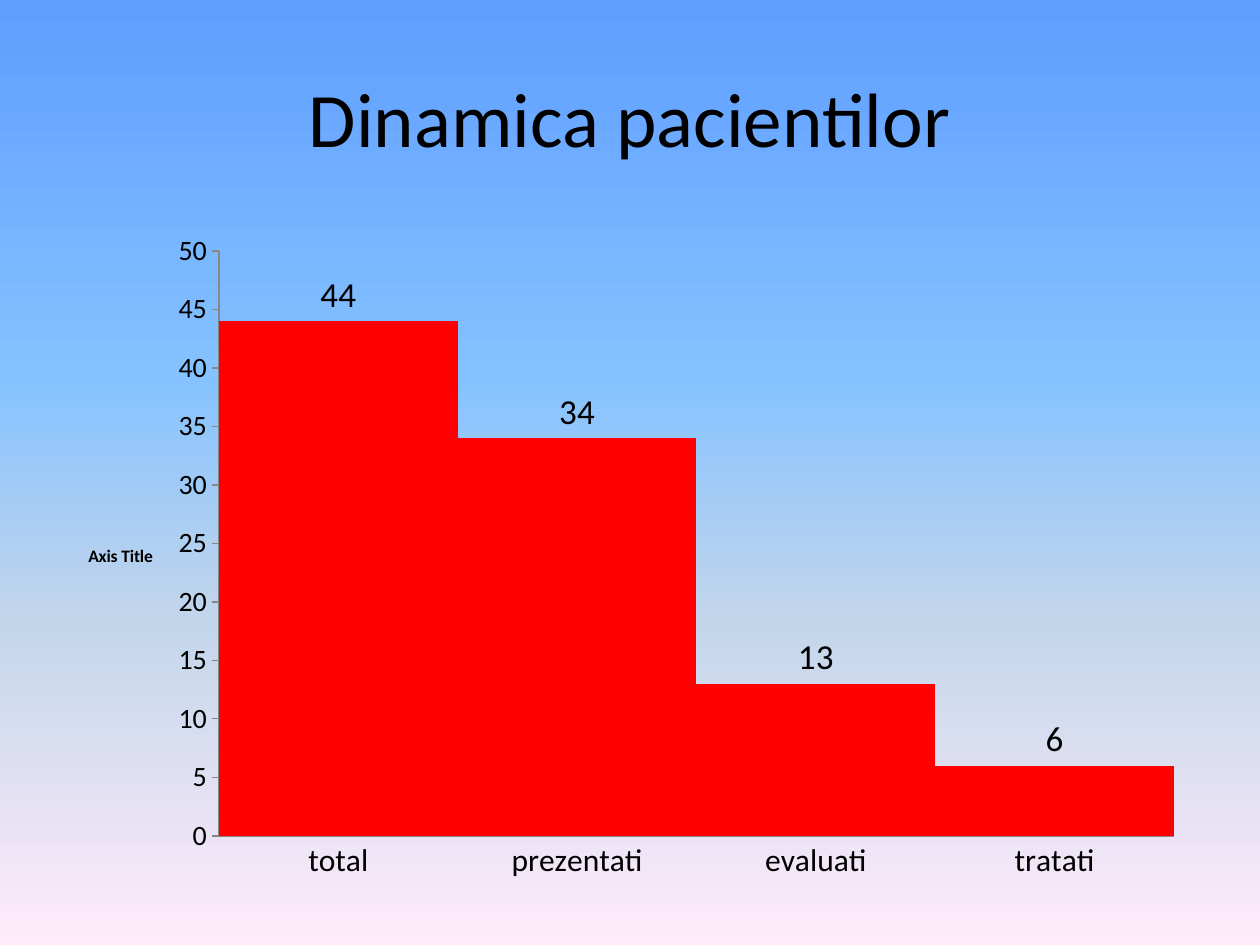
from lxml.etree import SubElement
from pptx import Presentation
from pptx.chart.data import CategoryChartData
from pptx.dml.color import RGBColor
from pptx.enum.chart import XL_CHART_TYPE, XL_LABEL_POSITION, XL_TICK_MARK
from pptx.enum.text import MSO_ANCHOR, PP_ALIGN
from pptx.oxml import parse_xml
from pptx.oxml.ns import nsdecls, qn
from pptx.util import Emu, Pt

PX = 914400 // 126
FONT = "Calibri"
COLORS = {"text": "000000", "bar": "FF0000", "axis": "878787"}
SKY = [(0, "5E9EFF"), (40, "85C2FF"), (66, "C4D6EB"), (100, "FFEBFA")]
CHART_BOX = (63, 221, 1134, 671)
PLOT_BOX = (219, 251, 955, 585)


def px(*lengths):
    return [Emu(n * PX) for n in lengths]


def color(name):
    return RGBColor.from_string(COLORS[name])


def set_font(font, size, bold=False):
    font.name = FONT
    font.size = Pt(size)
    font.bold = bold
    font.color.rgb = color("text")


def add_background(s, stops):
    fill = s.background.fill
    fill.gradient()
    fill.gradient_angle = 270
    # More than two gradient stops need XML
    gs_list = fill.gradient_stops[0]._gs.getparent()
    for gs in list(gs_list):
        gs_list.remove(gs)
    for pos, rgb in stops:
        gs_list.append(parse_xml(
            f'<a:gs {nsdecls("a")} pos="{pos * 1000}"><a:srgbClr val="{rgb}"/></a:gs>'))


def add_title(s, text, box):
    tf = s.shapes.add_textbox(*px(*box)).text_frame
    tf.word_wrap = True
    tf.vertical_anchor = MSO_ANCHOR.MIDDLE
    p = tf.paragraphs[0]
    p.text = text
    p.alignment = PP_ALIGN.CENTER
    set_font(p.font, 44)


def style_axis(axis, size, tick):
    axis.has_major_gridlines = False
    axis.major_tick_mark = tick
    axis.minor_tick_mark = XL_TICK_MARK.NONE
    axis.format.line.color.rgb = color("axis")
    axis.format.line.width = Pt(0.75)
    set_font(axis.tick_labels.font, size)


def add_axis_title(axis, text):
    tf = axis.axis_title.text_frame
    tf.text = text
    set_font(tf.paragraphs[0].font, 10, bold=True)
    body = tf._txBody.find(qn("a:bodyPr"))
    body.set("rot", "0")
    body.set("vert", "horz")


def place_plot(chart, plot, box):
    area = chart.plots[0]._element.getparent()
    layout = area.find(qn("c:layout"))
    if layout is None:
        layout = parse_xml(f'<c:layout {nsdecls("c")}/>')
        area.insert(0, layout)
    manual = SubElement(layout, qn("c:manualLayout"))
    x, y, w, h = box
    values = [("layoutTarget", "inner"), ("xMode", "edge"), ("yMode", "edge"),
              ("x", (plot[0] - x) / w), ("y", (plot[1] - y) / h),
              ("w", plot[2] / w), ("h", plot[3] / h)]
    for tag, value in values:
        SubElement(manual, qn(f"c:{tag}")).set("val", str(value))


def add_column_chart(s, cats, name, vals, box):
    data = CategoryChartData()
    data.categories = cats
    data.add_series(name, vals)
    chart = s.shapes.add_chart(XL_CHART_TYPE.COLUMN_CLUSTERED, *px(*box), data).chart
    chart.has_legend = False
    chart.has_title = False
    set_font(chart.font, 10)

    # Touching columns with values on top
    plot = chart.plots[0]
    plot.vary_by_categories = False
    plot.gap_width = 0
    fill = plot.series[0].format.fill
    fill.solid()
    fill.fore_color.rgb = color("bar")
    labels = plot.series[0].data_labels
    labels.show_value = True
    labels.position = XL_LABEL_POSITION.OUTSIDE_END
    set_font(labels.font, 20)

    # Axes
    style_axis(chart.category_axis, 18, XL_TICK_MARK.NONE)
    axis = chart.value_axis
    style_axis(axis, 16, XL_TICK_MARK.OUTSIDE)
    axis.minimum_scale, axis.maximum_scale, axis.major_unit = 0, 50, 5
    add_axis_title(axis, "Axis Title")
    place_plot(chart, PLOT_BOX, box)


def main():
    prs = Presentation()
    prs.slide_width, prs.slide_height = px(1260, 945)
    s = prs.slides.add_slide(prs.slide_layouts[6])
    add_background(s, SKY)
    add_title(s, "Dinamica pacientilor", (63, 38, 1134, 158))
    add_column_chart(s, ["total", "prezentati", "evaluati", "tratati"],
                     "Series 1", [44, 34, 13, 6], CHART_BOX)
    prs.save("out.pptx")


if __name__ == "__main__":
    main()
